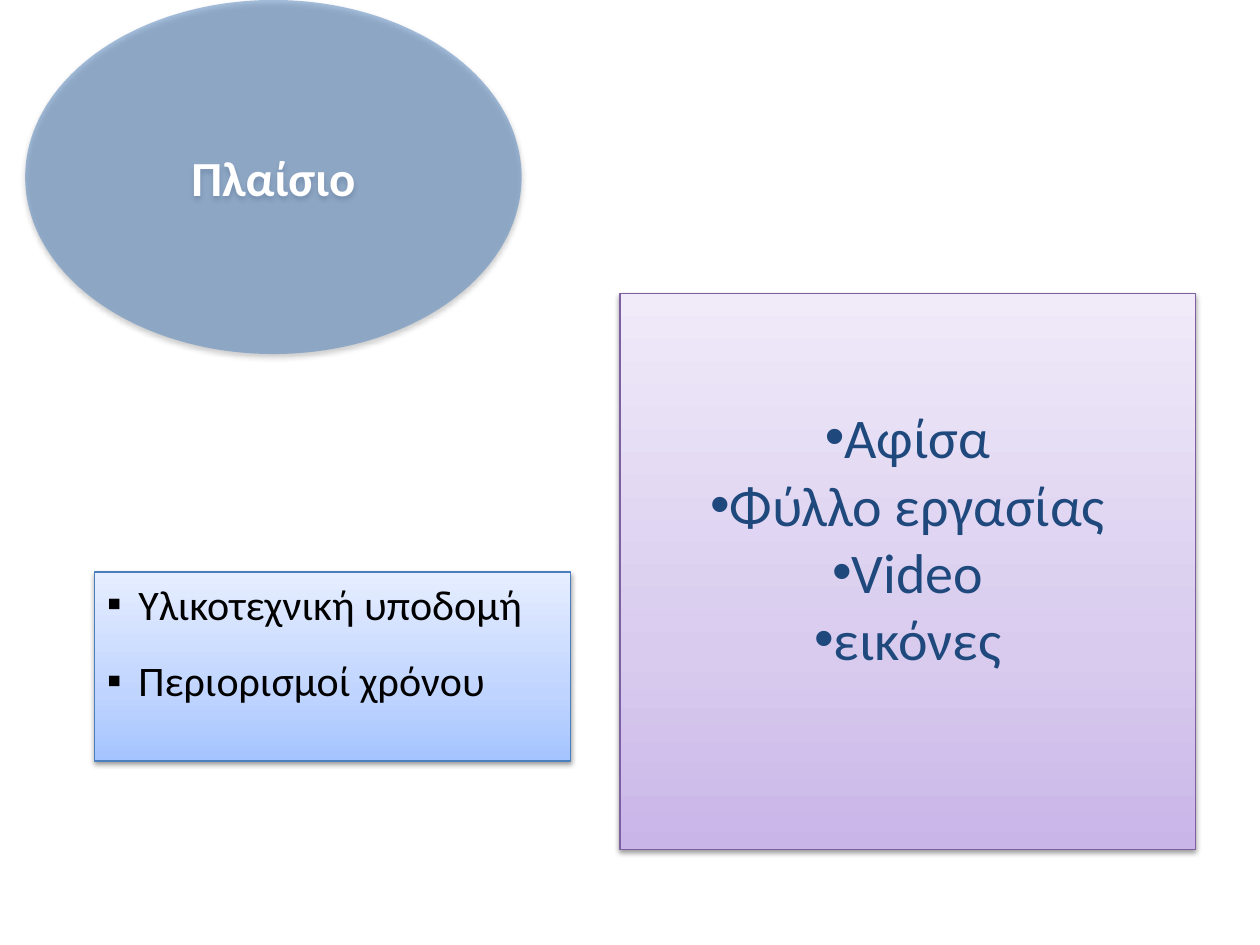
from lxml.etree import SubElement as Sub
from pptx import Presentation
from pptx.dml.color import RGBColor
from pptx.enum.shapes import MSO_SHAPE as Shape
from pptx.enum.text import MSO_ANCHOR as Anchor, PP_ALIGN as Align
from pptx.oxml.ns import qn
from pptx.util import Inches, Pt

BLACK = RGBColor(0, 0, 0)
WHITE = RGBColor(0xFF, 0xFF, 0xFF)
NAVY = RGBColor(0x1F, 0x49, 0x7D)
BLUE = RGBColor(0x4F, 0x81, 0xBD)
BLUE_EDGE = RGBColor(0x4B, 0x7E, 0xBC)
PURPLE_EDGE = RGBColor(0x7D, 0x60, 0xA0)
BLUES = [RGBColor.from_string(c) for c in ("A4C4FF", "BFD4FF", "E6EEFF")]
PURPLES = [RGBColor.from_string(c) for c in ("C9B5E8", "D8CBEE", "F0EAF9")]
STOPS = (0, 35, 100)
FONT = "Calibri"

TITLE = "Πλαίσιο"
LIMITS = ["Υλικοτεχνική υποδομή", "Περιορισμοί χρόνου"]
MEDIA = ["Αφίσα", "Φύλλο εργασίας", "Video", "εικόνες"]


def add_box(slide, kind, area, lines, size, color, anchor, align):
    box = slide.shapes.add_shape(kind, *(Inches(v) for v in area))
    frame = box.text_frame
    frame.text = "\n".join(lines)
    frame.word_wrap = True
    frame.vertical_anchor = anchor
    for para in frame.paragraphs:
        para.alignment = align
        font = para.runs[0].font
        font.name, font.size = FONT, Pt(size)
        font.color.rgb = color
    return box


def add_shadow(box):
    box.shadow.inherit = False
    effects = box._element.spPr.find(qn("a:effectLst"))
    shade = Sub(effects, qn("a:outerShdw"), blurRad=str(Pt(3.1)),
                dist=str(Pt(1.6)), dir="5400000", rotWithShape="0")
    black = Sub(shade, qn("a:srgbClr"), val=str(BLACK))
    Sub(black, qn("a:alpha"), val="38000")


def paint(box, colors, edge):
    """Fill with a gradient running from bottom to top, and draw the edge."""
    box.fill.gradient()
    grad = box._element.spPr.find(qn("a:gradFill"))
    stops = grad.find(qn("a:gsLst"))
    for old in list(stops):
        stops.remove(old)
    for pos, color in zip(STOPS, colors):
        stop = Sub(stops, qn("a:gs"), pos=str(pos * 1000))
        Sub(stop, qn("a:srgbClr"), val=str(color))
    grad.find(qn("a:lin")).set("ang", "16200000")
    box.line.color.rgb = edge
    box.line.width = Pt(0.75)
    add_shadow(box)


def add_bullets(box, mark, indent=0):
    for para in box.text_frame.paragraphs:
        props = para._p.get_or_add_pPr()
        props.set("marL", str(Inches(indent)))
        props.set("indent", str(-Inches(indent)))
        Sub(props, qn("a:buFont"), typeface="Arial")
        Sub(props, qn("a:buChar"), char=mark)


def main():
    deck = Presentation()
    deck.slide_width, deck.slide_height = Inches(10), Inches(7.5)
    slide = deck.slides.add_slide(deck.slide_layouts[6])

    limits = add_box(slide, Shape.RECTANGLE, (0.75, 4.54, 3.78, 1.5), LIMITS,
                     24, BLACK, Anchor.TOP, Align.LEFT)
    paint(limits, BLUES, BLUE_EDGE)
    for para in limits.text_frame.paragraphs:
        para.space_before = Pt(15)
    add_bullets(limits, "▪", 0.25)

    media = add_box(slide, Shape.RECTANGLE, (4.92, 2.33, 4.57, 4.41), MEDIA,
                    32, NAVY, Anchor.MIDDLE, Align.CENTER)
    paint(media, PURPLES, PURPLE_EDGE)
    media.text_frame.margin_bottom = Inches(0.59)
    add_bullets(media, "•")

    title = add_box(slide, Shape.OVAL, (0.2, 0, 3.94, 2.81), [TITLE],
                    28, WHITE, Anchor.MIDDLE, Align.CENTER)
    title.text_frame.paragraphs[0].runs[0].font.bold = True
    title.fill.solid()
    title.fill.fore_color.rgb = BLUE
    tint = title._element.spPr.find(qn("a:solidFill"))[0]
    Sub(tint, qn("a:alpha"), val="50000")
    title.line.fill.background()
    add_shadow(title)

    deck.save("out.pptx")


if __name__ == "__main__":
    main()
